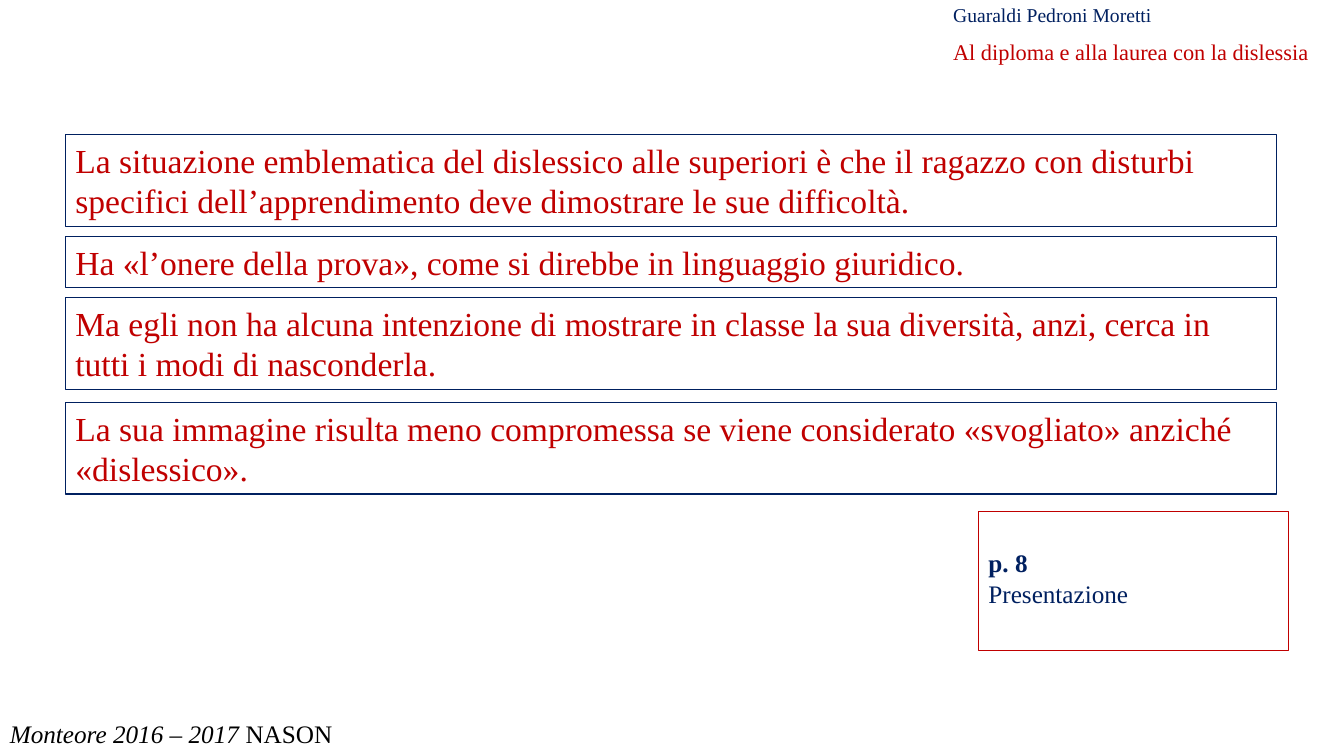
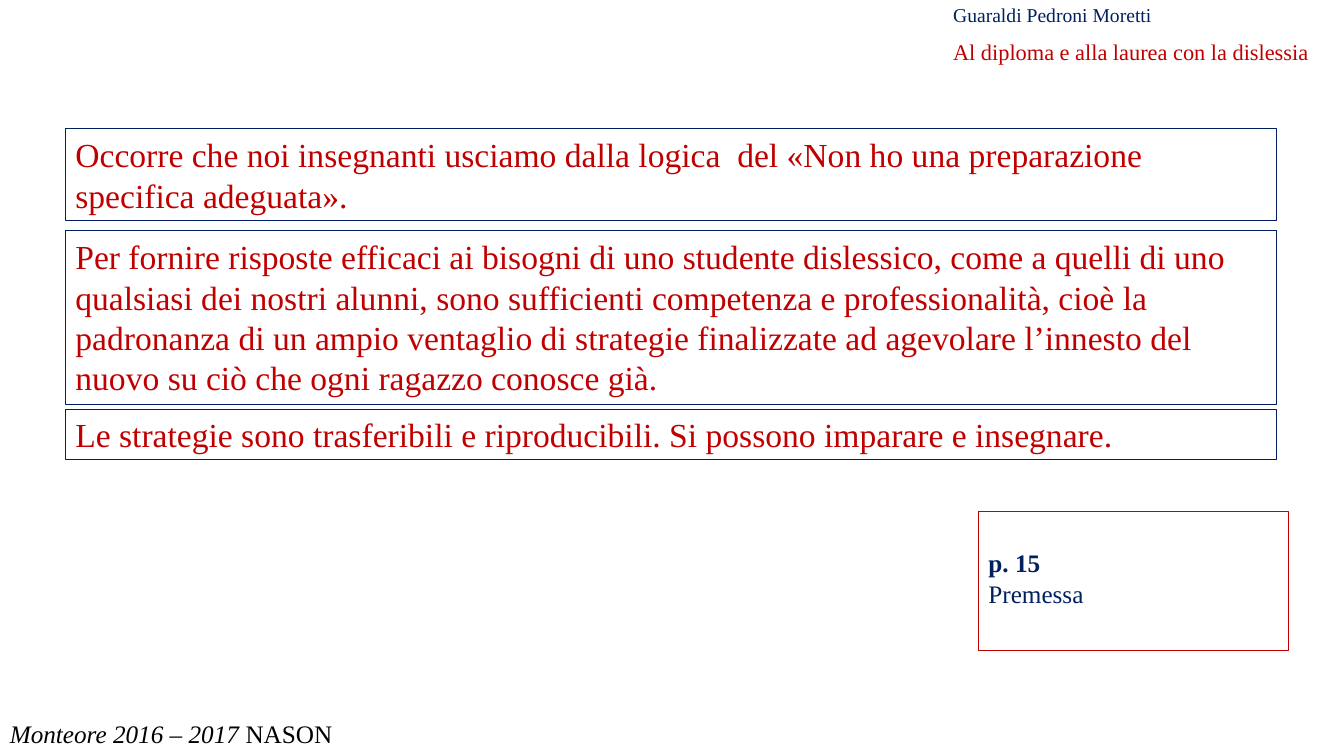
from pptx import Presentation
from pptx.dml.color import RGBColor
from pptx.enum import shapes, text
from pptx.util import Cm, Pt

NAVY = RGBColor(0x00, 0x20, 0x60)
RED = RGBColor(0xC0, 0x00, 0x00)
BLACK = RGBColor(0x00, 0x00, 0x00)
FONT = "Times New Roman"

AUTHORS = "Guaraldi Pedroni Moretti"
TITLE = "Al diploma e alla laurea con la dislessia"
COURSE, TEACHER = "Monteore 2016 – 2017 ", "NASON"

# Each quote: top in cm, number of lines, text
PAGES = [
    {
        "quotes": [
            (3.4, 2, "La situazione emblematica del dislessico alle superiori è che il ragazzo con "
                     "disturbi specifici dell’apprendimento deve dimostrare le sue difficoltà."),
            (5.97, 1, "Ha «l’onere della prova», come si direbbe in linguaggio giuridico."),
            (7.5, 2, "Ma egli non ha alcuna intenzione di mostrare in classe la sua diversità, anzi, "
                     "cerca in tutti i modi di nasconderla."),
            (10.14, 2, "La sua immagine risulta meno compromessa se viene considerato «svogliato» "
                       "anziché «dislessico»."),
        ],
        "reference": ("p. 8", "Presentazione"),
    },
    {
        "quotes": [
            (3.25, 2, "Occorre che noi insegnanti usciamo dalla logica  del «Non ho una preparazione "
                      "specifica adeguata»."),
            (5.82, 4, "Per fornire risposte efficaci ai bisogni di uno studente dislessico, come a "
                      "quelli di uno qualsiasi dei nostri alunni, sono sufficienti competenza e "
                      "professionalità, cioè la padronanza di un ampio ventaglio di strategie "
                      "finalizzate ad agevolare l’innesto del nuovo su ciò che ogni ragazzo conosce già."),
            (10.31, 1, "Le strategie sono trasferibili e riproducibili. Si possono imparare e insegnare."),
        ],
        "reference": ("p. 15", "Premessa"),
    },
]

HEADER_LEFT = 23.77
QUOTE_LEFT, QUOTE_WIDTH = 1.65, 30.53
QUOTE_PADDING, QUOTE_LINE = 0.25, 1.03


def place(box, left, top, width, height):
    box.left, box.top, box.width, box.height = (Cm(n) for n in (left, top, width, height))


def write(box, paragraphs, size, color, spacing=1.0, inset=0.13):
    """Fill box with paragraphs, each a list of (text, font flags) spans."""
    frame = box.text_frame
    frame.word_wrap = True
    frame.auto_size = text.MSO_AUTO_SIZE.NONE
    frame.vertical_anchor = text.MSO_ANCHOR.TOP
    frame.margin_left = frame.margin_right = Cm(0.25)
    frame.margin_top, frame.margin_bottom = Cm(inset), Cm(0.13)
    for index, spans in enumerate(paragraphs):
        para = frame.add_paragraph() if index else frame.paragraphs[0]
        para.alignment = text.PP_ALIGN.LEFT
        para.line_spacing = spacing
        for words, flags in spans:
            span = para.add_run()
            span.text = words
            font = span.font
            font.name, font.size, font.color.rgb = FONT, Pt(size), color
            font.bold = flags.get("bold", False)
            font.italic = flags.get("italic", False)


def add_label(page, area, paragraphs, **style):
    box = page.shapes.add_textbox(*(Cm(n) for n in area))
    write(box, paragraphs, **style)


def add_frame(page, area, paragraphs, line, **style):
    box = page.shapes.add_shape(shapes.MSO_SHAPE.RECTANGLE, *(Cm(n) for n in area))
    box.shadow.inherit = False
    box.fill.background()
    box.line.color.rgb = line
    box.line.width = Pt(0.75)
    write(box, paragraphs, **style)


def add_page(deck, quotes, reference):
    page = deck.slides.add_slide(deck.slide_layouts[5])
    title = page.shapes.title
    place(title, HEADER_LEFT, 0.91, 10.05, 0.94)
    write(title, [[(TITLE, {})]], size=16, color=RED, spacing=0.9)
    add_label(page, (HEADER_LEFT, 0, 6.7, 0.79), [[(AUTHORS, {})]],
              size=14, color=NAVY, spacing=0.9)
    add_label(page, (0, 17.98, 9.2, 1.02),
              [[(COURSE, {"italic": True}), (TEACHER, {})]], size=18, color=BLACK)

    for top, lines, quote in quotes:
        height = QUOTE_PADDING + QUOTE_LINE * lines
        add_frame(page, (QUOTE_LEFT, top, QUOTE_WIDTH, height), [[(quote, {})]],
                  line=NAVY, size=24, color=RED)

    number, section = reference
    add_frame(page, (24.66, 12.9, 7.82, 3.5), [[(number, {"bold": True})], [(section, {})]],
              line=RED, size=18, color=NAVY, inset=0.9)


def main():
    deck = Presentation()
    deck.slide_width, deck.slide_height = Cm(33.87), Cm(19.05)
    for content in PAGES:
        add_page(deck, **content)
    deck.save("out.pptx")


if __name__ == "__main__":
    main()
